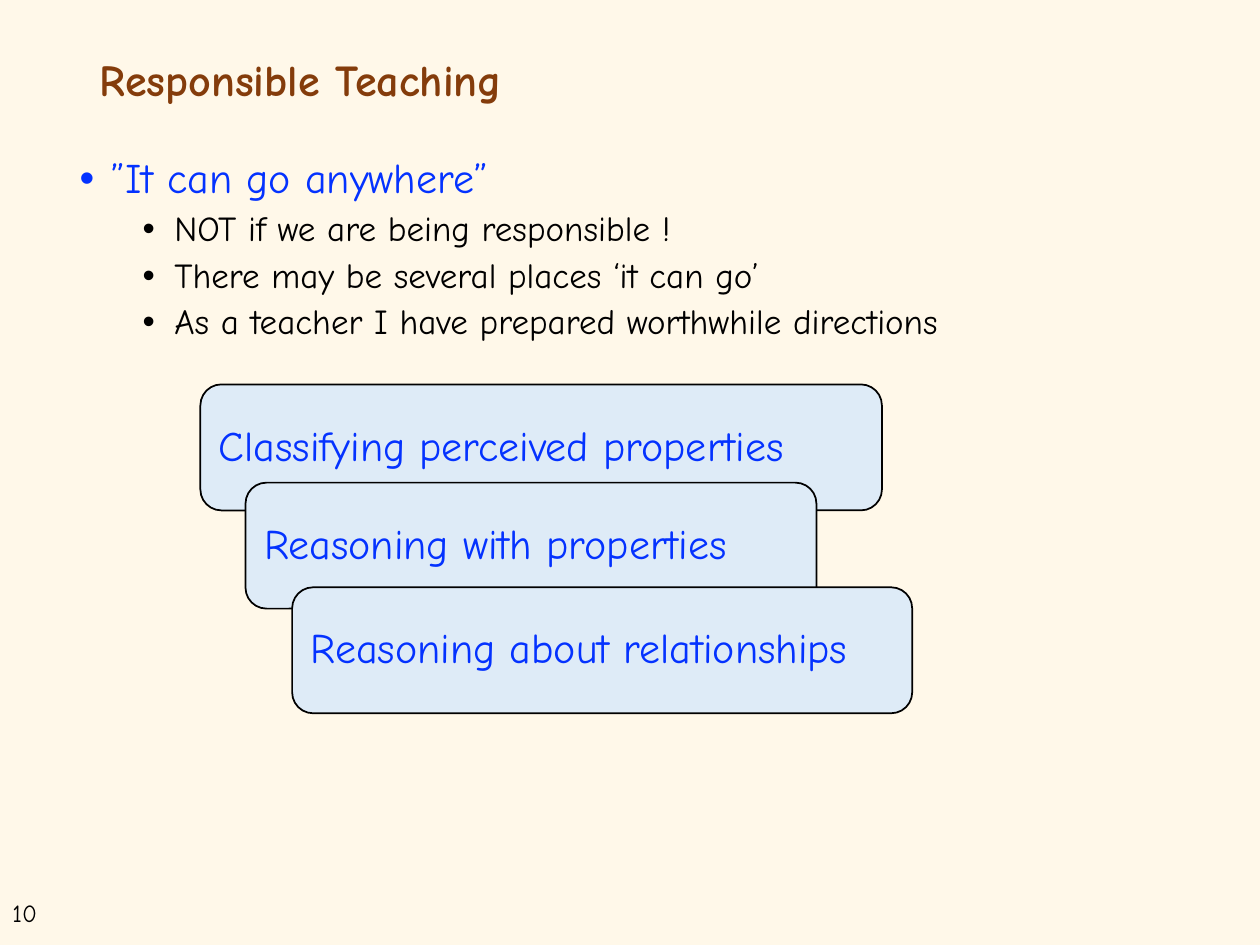
from lxml.etree import SubElement
from pptx import Presentation
from pptx.dml.color import RGBColor
from pptx.enum.shapes import MSO_SHAPE as Shape
from pptx.enum.text import MSO_ANCHOR as Anchor, MSO_AUTO_SIZE as AutoSize, PP_ALIGN as Align
from pptx.oxml.ns import qn
from pptx.util import Cm, Pt

FONT = "Comic Neue"
CREAM, BROWN, BLUE, BLACK, PALE_BLUE = "FFF8E9", "843C0B", "0432FF", "000000", "DEEBF7"


def paint(color, value):
    """Set a fill, line or font colour from a hex string."""
    color.rgb = RGBColor.from_string(value)


class SlideBuilder:
    def __init__(self, presentation):
        layout = presentation.slide_layouts[1]
        self.slide = presentation.slides.add_slide(layout)
        background = self.slide.background.fill
        background.solid()
        paint(background.fore_color, CREAM)

    def place(self, shape, left, top, width, height):
        shape.left, shape.top = Cm(left), Cm(top)
        shape.width, shape.height = Cm(width), Cm(height)

    def style(self, paragraph, size, color, before=0, bold=False):
        paragraph.alignment = Align.LEFT
        paragraph.line_spacing = 0.9
        paragraph.space_before = Pt(before)
        font = paragraph.font
        font.name, font.size, font.bold = FONT, Pt(size), bold
        paint(font.color, color)

    def title(self, text, *box):
        shape = self.slide.shapes.title
        self.place(shape, *box)
        frame = shape.text_frame
        frame.text = text
        frame.auto_size = AutoSize.NONE
        frame.vertical_anchor = Anchor.MIDDLE
        self.style(frame.paragraphs[0], 25.2, BROWN, bold=True)

    def bullets(self, items, *box):
        """Fill the body with (level, text) items."""
        shape = self.slide.placeholders[1]
        self.place(shape, *box)
        frame = shape.text_frame
        frame.text = "\n".join(text for _, text in items)
        frame.auto_size = AutoSize.NONE
        frame.vertical_anchor = Anchor.TOP
        for paragraph, (level, _) in zip(frame.paragraphs, items):
            paragraph.level = level
            if level:
                self.style(paragraph, 20, BLACK, before=5)
            else:
                self.style(paragraph, 24, BLUE, before=10)
            properties = paragraph._p.get_or_add_pPr()
            properties.set("marL", str(Cm(0.64 + 1.27 * level)))
            properties.set("indent", str(-Cm(0.64)))
            SubElement(properties, qn("a:buFont"), typeface="Arial")
            SubElement(properties, qn("a:buChar"), char="•")
            # The schema wants bullets ahead of the default run properties.
            properties.append(properties.find(qn("a:defRPr")))

    def card(self, text, *box):
        shape = self.slide.shapes.add_shape(Shape.ROUNDED_RECTANGLE, *map(Cm, box))
        shape.shadow.inherit = False
        shape.fill.solid()
        paint(shape.fill.fore_color, PALE_BLUE)
        paint(shape.line.color, BLACK)
        shape.line.width = Pt(1)
        frame = shape.text_frame
        frame.text = text
        frame.vertical_anchor = Anchor.MIDDLE
        self.style(frame.paragraphs[0], 24, BLUE, before=10)

    def page_number(self, text, *box):
        frame = self.slide.shapes.add_textbox(*map(Cm, box)).text_frame
        frame.text = text
        frame.word_wrap = True
        self.style(frame.paragraphs[0], 14, BLACK)
        frame.paragraphs[0].line_spacing = 1.0


def main():
    presentation = Presentation()
    presentation.slide_width, presentation.slide_height = Cm(25.4), Cm(19.05)
    builder = SlideBuilder(presentation)
    builder.page_number("10", 0, 17.98, 1.35, 0.86)
    builder.title("Responsible Teaching", 1.75, 1.02, 21.89, 1.27)
    builder.bullets([
        (0, "”It can go anywhere”"),
        (1, "NOT if we are being responsible !"),
        (1, "There may be several places ‘it can go’"),
        (1, "As a teacher I have prepared worthwhile directions"),
    ], 1.35, 3.05, 22.73, 4.09)
    for text, left, top, width in [
        ("Classifying perceived properties", 4.04, 7.75, 13.74),
        ("Reasoning with properties", 4.95, 9.73, 11.51),
        ("Reasoning about relationships", 5.89, 11.84, 12.5),
    ]:
        builder.card(text, left, top, width, 2.54)
    presentation.save("out.pptx")


if __name__ == "__main__":
    main()
